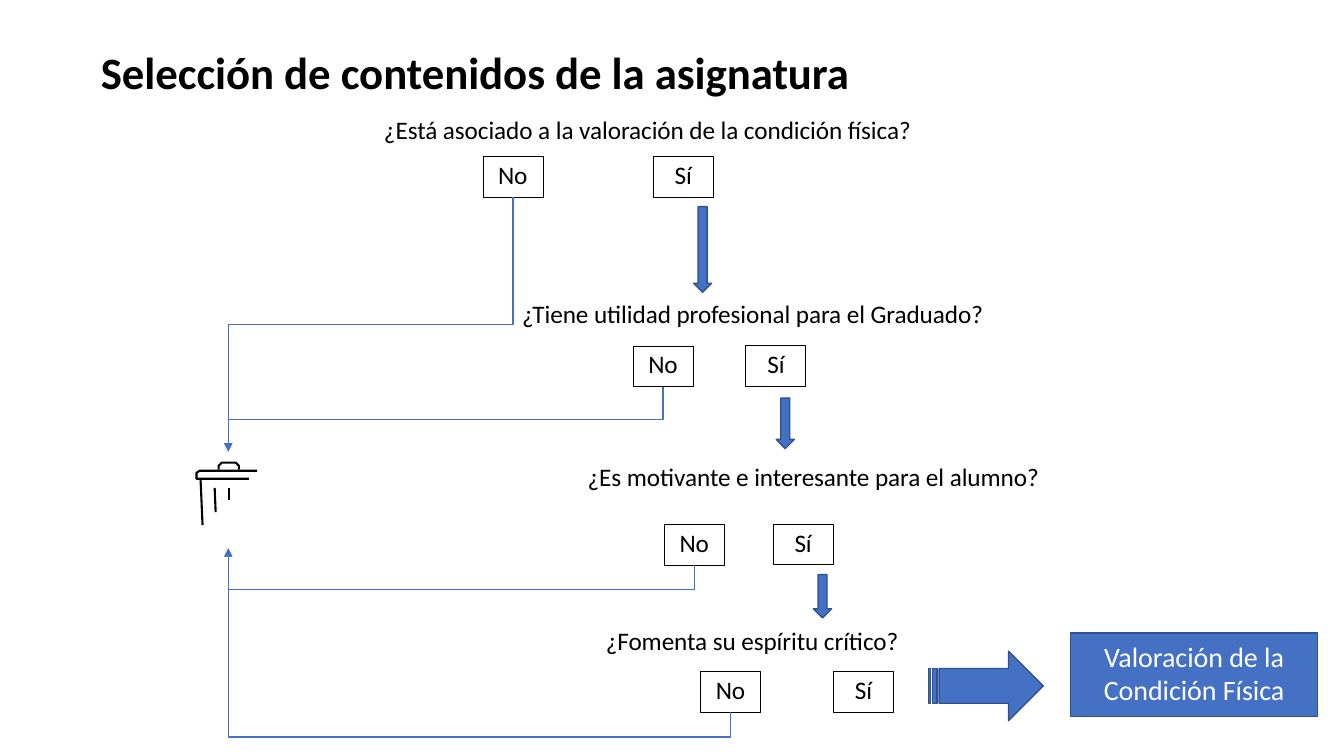
from lxml.etree import SubElement
from pptx import Presentation
from pptx.dml.color import RGBColor
from pptx.enum.shapes import MSO_SHAPE
from pptx.enum.text import MSO_ANCHOR, PP_ALIGN
from pptx.oxml.ns import qn
from pptx.util import Inches, Pt

BLUE, NAVY, BLACK, WHITE = "4471C4", "2E528F", "000000", "FFFFFF"
BIN_X = 2.265
BOX_WIDTH, BOX_HEIGHT = 0.595, 0.405
UNITS = 1000  # freeform units per inch


def write(box, text, size=18, color=BLACK, bold=False, align=PP_ALIGN.LEFT, top=0.01, before=1):
    frame = box.text_frame
    frame.word_wrap = True
    frame.vertical_anchor = MSO_ANCHOR.TOP
    frame.margin_left = frame.margin_right = frame.margin_bottom = 0
    frame.margin_top = Inches(top)
    for index, line in enumerate(text.split("\n")):
        para = frame.add_paragraph() if index else frame.paragraphs[0]
        para.alignment = align
        para.line_spacing = 1.0
        para.space_before = Pt(0 if index else before)
        span = para.add_run()
        span.text = line
        span.font.name = "Calibri"
        span.font.size = Pt(size)
        span.font.bold = bold
        span.font.color.rgb = RGBColor.from_string(color)
        span.font._element.set("spc", "-5")


def paint(shape, fill=None, line=BLACK, width=1):
    shape.shadow.inherit = False
    if fill:
        shape.fill.solid()
        shape.fill.fore_color.rgb = RGBColor.from_string(fill)
    else:
        shape.fill.background()
    shape.line.color.rgb = RGBColor.from_string(line)
    shape.line.width = Pt(width)


deck = Presentation()
deck.slide_width, deck.slide_height = Inches(13.333), Inches(7.5)
page = deck.slides.add_slide(deck.slide_layouts[5])
shapes = page.shapes

# Title
title = shapes.title
title.left, title.top, title.width, title.height = map(Inches, (1, 0.43, 9, 0.56))
write(title, "Selección de contenidos de la asignatura", size=32, bold=True)

# Bin: handle, lid, side and ribs
bin_strokes = [
    [(2.17, 4.66), (2.17, 4.62), (2.2, 4.59), (2.34, 4.59), (2.37, 4.62), (2.37, 4.66)],
    [(2.55, 4.67), (1.98, 4.67), (1.95, 4.69), (1.95, 4.75), (2.47, 4.75)],
    [(1.99, 4.75), (2.01, 5.21)],
    [(2.13, 4.84), (2.14, 5.08)],
    [(2.27, 4.84), (2.27, 4.96)],
]
drawings = [(bin_strokes, BLACK, 1.5, False)]

# Questions: text, left, top, answers' top, No left, Sí left, bend of the route, end of the route
questions = [
    ("¿Está asociado a la valoración de la condición física?", 3.81, 1.12, 1.55, 4.79, 6.48, 3.22, 4.48),
    ("¿Tiene utilidad profesional para el Graduado?", 5.18, 2.95, 3.43, 6.28, 7.4, 4.16, 4.48),
    ("¿Es motivante e interesante para el alumno?", 5.83, 4.57, 5.2, 6.59, 7.67, 5.85, 5.44),
    ("¿Fomenta su espíritu crítico?", 6.01, 6.19, 6.66, 6.95, 8.27, 7.31, 5.44),
]
for text, left, top, answer_top, no_left, yes_left, bend, end in questions:
    question = shapes.add_textbox(*map(Inches, (left, top, 5.3, 0.33)))
    write(question, text)

    for answer, answer_left, width in (("No", no_left, 0.25), ("Sí", yes_left, 0.75)):
        box = shapes.add_shape(
            MSO_SHAPE.RECTANGLE, *map(Inches, (answer_left, answer_top, BOX_WIDTH, BOX_HEIGHT)))
        paint(box, width=width)
        write(box, answer, align=PP_ALIGN.CENTER, top=0.03, before=2.5)

    # Route from No to the bin
    start_x = no_left + BOX_WIDTH / 2
    route = [(start_x, answer_top + BOX_HEIGHT), (start_x, bend), (BIN_X, bend), (BIN_X, end)]
    drawings.append(([route], BLUE, 1, True))

# Bin and bent routes
for strokes, color, width, arrow in drawings:
    first_x, first_y = strokes[0][0]
    outline = shapes.build_freeform(first_x * UNITS, first_y * UNITS, scale=Inches(1) / UNITS)
    for stroke in strokes:
        points = [(x * UNITS, y * UNITS) for x, y in stroke]
        if stroke is not strokes[0]:
            outline.move_to(*points[0])
        outline.add_line_segments(points[1:], close=False)
    drawing = outline.convert_to_shape()
    paint(drawing, line=color, width=width)
    if arrow:
        SubElement(drawing._element.spPr.find(qn("a:ln")), qn("a:tailEnd"), type="triangle")

# Block arrows from each Sí to the next step
block_arrows = [
    (MSO_SHAPE.DOWN_ARROW, 6.88, 2.05, 0.18, 0.85),
    (MSO_SHAPE.DOWN_ARROW, 7.7, 3.95, 0.18, 0.5),
    (MSO_SHAPE.DOWN_ARROW, 8.07, 5.7, 0.18, 0.43),
    (MSO_SHAPE.STRIPED_RIGHT_ARROW, 9.21, 6.46, 1.14, 0.69),
]
for kind, *place in block_arrows:
    paint(shapes.add_shape(kind, *map(Inches, place)), fill=BLUE, line=NAVY)

# Result
result = shapes.add_shape(MSO_SHAPE.RECTANGLE, *map(Inches, (10.62, 6.28, 2.45, 0.83)))
paint(result, fill=BLUE, line=NAVY)
write(result, "Valoración de la\nCondición Física", size=20, color=WHITE,
      align=PP_ALIGN.CENTER, top=0.06, before=4.5)

deck.save("out.pptx")
